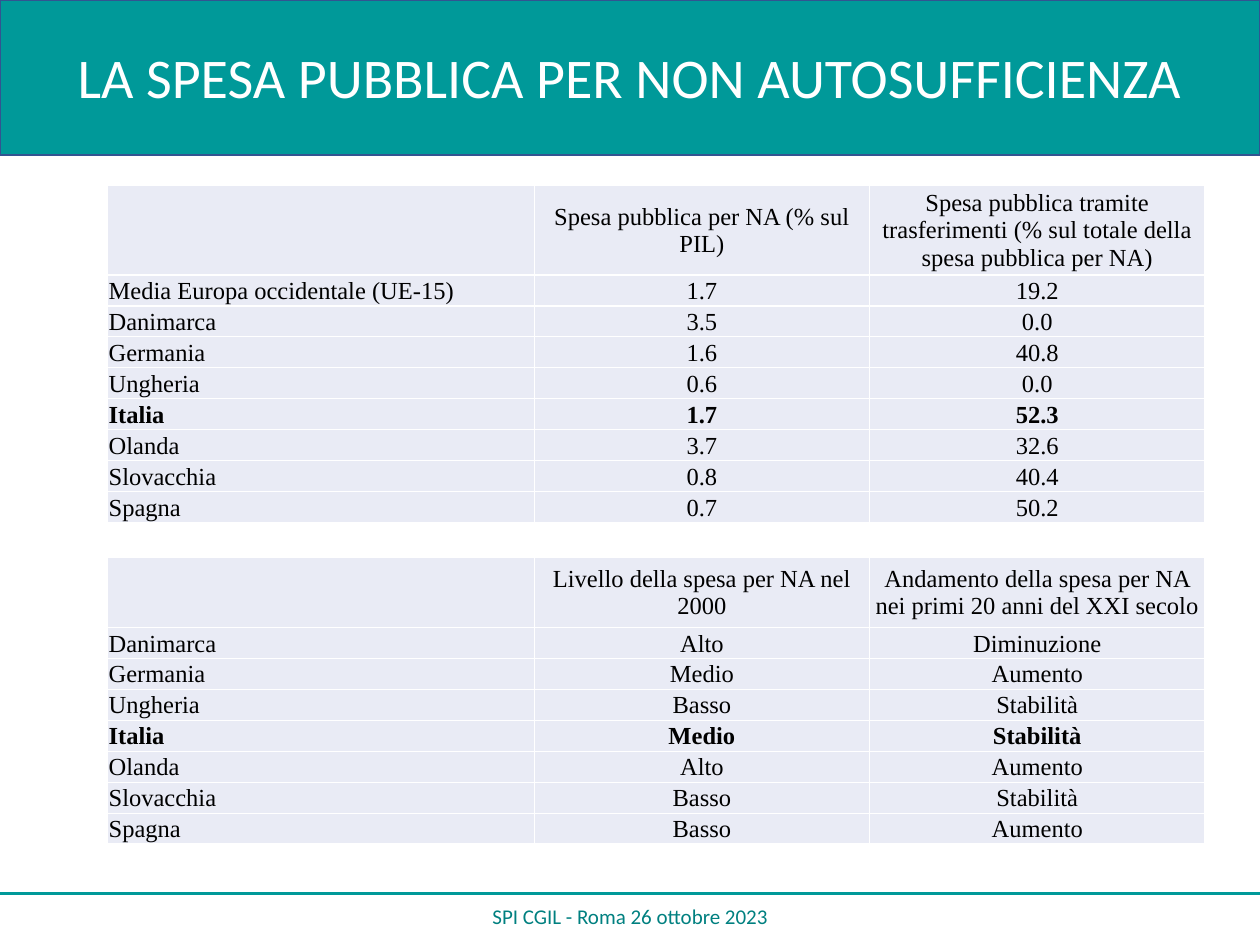
from dataclasses import dataclass

from lxml.etree import SubElement
from pptx import Presentation
from pptx.dml.color import RGBColor
from pptx.enum.shapes import MSO_CONNECTOR as Connector, MSO_SHAPE as Shape
from pptx.enum.text import MSO_ANCHOR as Anchor, PP_ALIGN as Align
from pptx.oxml.ns import qn
from pptx.util import Cm, Pt


@dataclass(frozen=True)
class Theme:
    teal: RGBColor = RGBColor(0x00, 0x99, 0x99)
    band_edge: RGBColor = RGBColor(0x32, 0x54, 0x91)
    footer: RGBColor = RGBColor(0x00, 0x80, 0x80)
    cell: RGBColor = RGBColor(0xE9, 0xEB, 0xF5)
    white: RGBColor = RGBColor(0xFF, 0xFF, 0xFF)
    black: RGBColor = RGBColor(0x00, 0x00, 0x00)
    heading_font: str = "Calibri"
    table_font: str = "Times New Roman"
    title_size: int = 32
    table_size: int = 14
    footer_size: int = 12


@dataclass(frozen=True)
class Label:
    text: str
    place: tuple[float, float, float, float]
    size: int
    color: RGBColor


@dataclass(frozen=True)
class DataTable:
    top: float
    rows: list[tuple[str, str, str]]


THEME = Theme()
PAGE_WIDTH, PAGE_HEIGHT = 25.4, 19.05
BAND_HEIGHT, RULE_TOP = 3.12, 18.01
TABLE_LEFT = 2.16
COLUMN_WIDTHS = (8.61, 6.76, 6.76)
HEADER_HEIGHT, ROW_HEIGHT = 1.42, 0.53
HIGHLIGHT = "Italia"

LABELS = [
    Label("LA SPESA PUBBLICA PER NON AUTOSUFFICIENZA",
          (0, 0, PAGE_WIDTH, 3.05), THEME.title_size, THEME.white),
    Label("SPI CGIL - Roma 26 ottobre 2023",
          (8.41, 17.96, 8.59, 1.02), THEME.footer_size, THEME.footer),
]

TABLES = [
    DataTable(3.73, [
        ("", "Spesa pubblica per NA (% sul PIL)",
         "Spesa pubblica tramite trasferimenti (% sul totale della spesa pubblica per NA)"),
        ("Media Europa occidentale (UE-15)", "1.7", "19.2"),
        ("Danimarca", "3.5", "0.0"),
        ("Germania", "1.6", "40.8"),
        ("Ungheria", "0.6", "0.0"),
        ("Italia", "1.7", "52.3"),
        ("Olanda", "3.7", "32.6"),
        ("Slovacchia", "0.8", "40.4"),
        ("Spagna", "0.7", "50.2"),
    ]),
    DataTable(11.23, [
        ("", "Livello della spesa per NA nel 2000",
         "Andamento della spesa per NA nei primi 20 anni del XXI secolo"),
        ("Danimarca", "Alto", "Diminuzione"),
        ("Germania", "Medio", "Aumento"),
        ("Ungheria", "Basso", "Stabilità"),
        ("Italia", "Medio", "Stabilità"),
        ("Olanda", "Alto", "Aumento"),
        ("Slovacchia", "Basso", "Stabilità"),
        ("Spagna", "Basso", "Aumento"),
    ]),
]


def apply(target, values: dict) -> None:
    for name, value in values.items():
        setattr(target, name, value)


def write(para, text: str, font: str, size: int, color: RGBColor,
          align: Align, bold: bool = False) -> None:
    para.alignment = align
    span = para.add_run()
    span.text = text
    apply(span.font, {"name": font, "size": Pt(size), "bold": bold})
    span.font.color.rgb = color


def draw_band(page) -> None:
    band = page.shapes.add_shape(Shape.RECTANGLE, 0, 0, Cm(PAGE_WIDTH), Cm(BAND_HEIGHT))
    band.shadow.inherit = False
    band.fill.solid()
    band.fill.fore_color.rgb = THEME.teal
    band.line.color.rgb = THEME.band_edge
    band.line.width = Pt(1)


def draw_rule(page) -> None:
    rule = page.shapes.add_connector(
        Connector.STRAIGHT, 0, Cm(RULE_TOP), Cm(PAGE_WIDTH), Cm(RULE_TOP))
    rule.line.color.rgb = THEME.teal
    rule.line.width = Pt(2)
    SubElement(rule._element.spPr, qn("a:effectLst"))


def draw_label(page, label: Label) -> None:
    box = page.shapes.add_textbox(*map(Cm, label.place))
    apply(box.text_frame, {"word_wrap": True, "vertical_anchor": Anchor.MIDDLE})
    write(box.text_frame.paragraphs[0], label.text, THEME.heading_font,
          label.size, label.color, Align.CENTER)


def add_borders(cell) -> None:
    properties = cell._tc.get_or_add_tcPr()
    for index, side in enumerate(("lnL", "lnR", "lnT", "lnB")):
        line = properties.makeelement(qn(f"a:{side}"), {"w": str(Pt(1))})
        fill = SubElement(line, qn("a:solidFill"))
        SubElement(fill, qn("a:srgbClr"), val=str(THEME.white))
        properties.insert(index, line)


def draw_table(page, data: DataTable) -> None:
    heights = [HEADER_HEIGHT] + [ROW_HEIGHT] * (len(data.rows) - 1)
    table = page.shapes.add_table(
        len(data.rows), len(COLUMN_WIDTHS), Cm(TABLE_LEFT), Cm(data.top),
        Cm(sum(COLUMN_WIDTHS)), Cm(sum(heights))).table
    apply(table, {"first_row": False, "horz_banding": False})
    for column, width in zip(table.columns, COLUMN_WIDTHS):
        column.width = Cm(width)
    for row, height, texts in zip(table.rows, heights, data.rows):
        row.height = Cm(height)
        for index, (cell, text) in enumerate(zip(row.cells, texts)):
            cell.fill.solid()
            cell.fill.fore_color.rgb = THEME.cell
            add_borders(cell)
            apply(cell, {
                "vertical_anchor": Anchor.MIDDLE, "margin_left": Cm(0.03),
                "margin_right": Cm(0.03), "margin_top": Cm(0.03), "margin_bottom": 0,
            })
            if text:
                write(cell.text_frame.paragraphs[0], text, THEME.table_font,
                      THEME.table_size, THEME.black,
                      Align.CENTER if index else Align.LEFT, texts[0] == HIGHLIGHT)


def main() -> None:
    deck = Presentation()
    apply(deck, {"slide_width": Cm(PAGE_WIDTH), "slide_height": Cm(PAGE_HEIGHT)})
    page = deck.slides.add_slide(deck.slide_layouts[6])

    # Title band and footer
    draw_band(page)
    draw_rule(page)
    for label in LABELS:
        draw_label(page, label)

    # Spending tables
    for data in TABLES:
        draw_table(page, data)

    deck.save("out.pptx")


if __name__ == "__main__":
    main()
